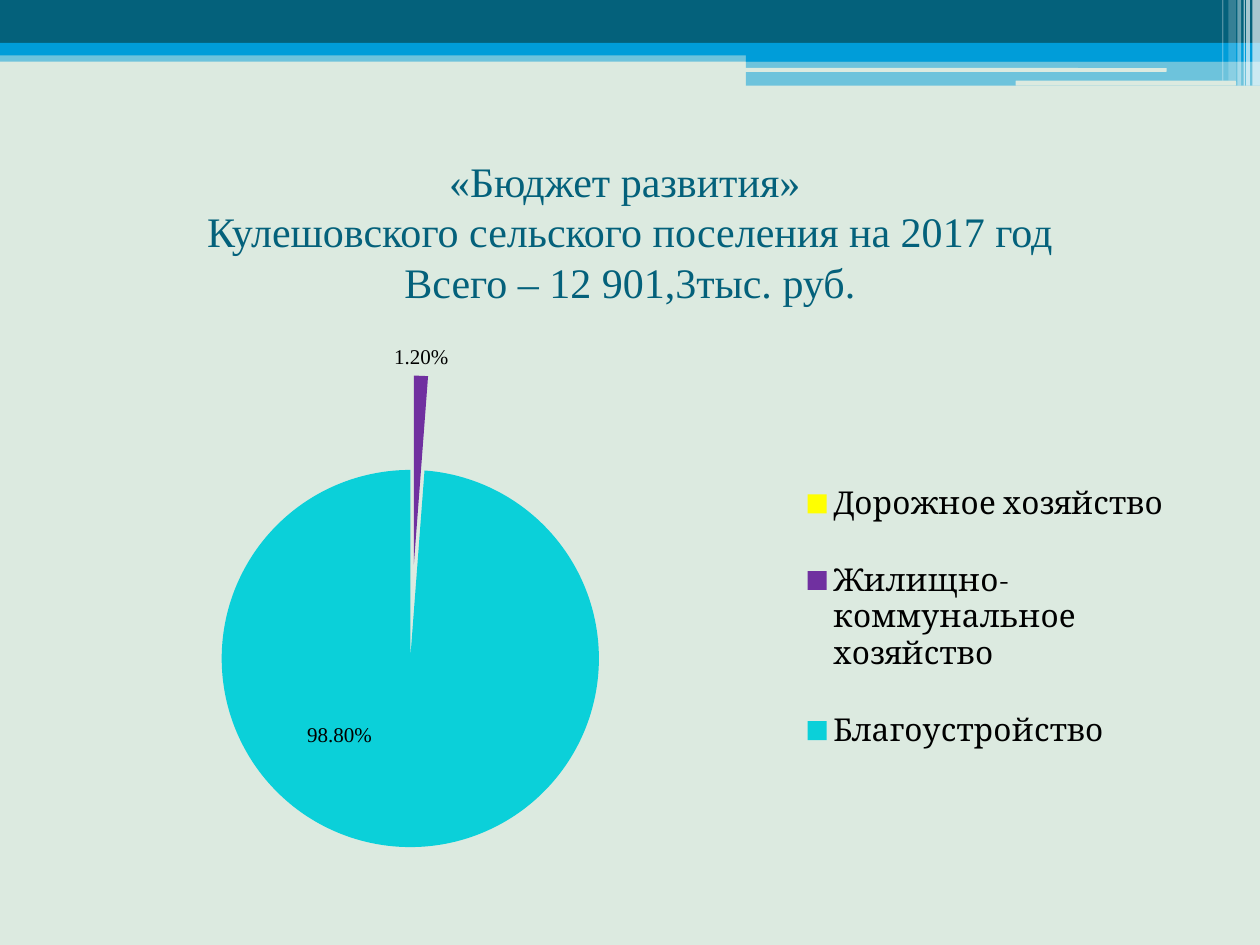
from lxml.etree import SubElement
from pptx import Presentation
from pptx.chart.data import CategoryChartData
from pptx.dml.color import RGBColor
from pptx.enum.chart import XL_CHART_TYPE, XL_LABEL_POSITION, XL_LEGEND_POSITION
from pptx.enum.shapes import MSO_SHAPE
from pptx.enum.text import MSO_ANCHOR, PP_ALIGN
from pptx.oxml import parse_xml
from pptx.oxml.ns import nsdecls, qn
from pptx.util import Inches, Pt

TEAL, BLUE, PAPER, WHITE = "04617B", "009DD9", "DCEAE0", "FFFFFF"
SERIF = "Times New Roman"
PERCENT = "0.00%"

# left, top, width, height, colour, opacity in percent
BANDS = [
    (0, 0.4, 10, 0.09, BLUE, 50),
    (0, 0, 10, 0.34, TEAL, 100),
    (0, 0.34, 10, 0.1, BLUE, 100),
    (5.92, 0.39, 4.08, 0.1, BLUE, 100),
    (5.92, 0.48, 4.08, 0.2, BLUE, 50),
]
GROOVES = [(5.91, 0.54, 3.35, 0.03), (8.06, 0.64, 1.75, 0.04)]
# left, width, height, opacity in percent
STRIPES = [
    (9.94, 0.06, 0.68, 65), (9.89, 0.03, 0.68, 65), (9.87, 0.01, 0.68, 60),
    (9.82, 0.03, 0.68, 40), (9.75, 0.06, 0.64, 20), (9.7, 0.01, 0.64, 30),
]
SECTORS = [
    ("Дорожное хозяйство ", None, "FFFF00"),
    ("Жилищно-коммунальное хозяйство", 0.012, "7030A0"),
    ("Благоустройство", 0.988, "0BD0D9"),
]
TITLE_LINES = [
    "«Бюджет развития» ",
    "Кулешовского сельского поселения на 2017 год",
    "Всего – 12 901,3тыс. руб.",
]


def rgb(value):
    return RGBColor.from_string(value)


def set_font(font, size, name, colour):
    formats = {"size": Pt(size), "name": name, "bold": False}
    for attribute, value in formats.items():
        setattr(font, attribute, value)
    font.color.rgb = rgb(colour)


def add_bar(slide, box, colour, opacity=100, kind=MSO_SHAPE.RECTANGLE):
    bar = slide.shapes.add_shape(kind, *map(Inches, box))
    bar.shadow.inherit = False
    bar.line.fill.background()
    bar.fill.solid()
    bar.fill.fore_color.rgb = rgb(colour)
    if opacity < 100:
        tint = bar.fill._xPr.find(".//" + qn("a:srgbClr"))
        SubElement(tint, qn("a:alpha"), val=str(opacity * 1000))
    return bar


def manual_layout(target=None, **offsets):
    """Chart layout in fractions of the chart's width and height."""
    parts = [f'<c:layoutTarget val="{target}"/>'] if target else []
    if "w" in offsets:
        parts += ['<c:xMode val="edge"/>', '<c:yMode val="edge"/>']
    parts += [f'<c:{key} val="{value}"/>' for key, value in offsets.items()]
    return parse_xml(f'<c:layout {nsdecls("c")}><c:manualLayout>'
                     f'{"".join(parts)}</c:manualLayout></c:layout>')


def add_title(slide):
    title = slide.shapes.add_textbox(*map(Inches, (0.5, 1.25, 9, 1.17))).text_frame
    title.word_wrap = True
    title.vertical_anchor = MSO_ANCHOR.MIDDLE
    heading = title.paragraphs[0]
    heading.text = "\v".join(TITLE_LINES)
    heading.alignment = PP_ALIGN.CENTER
    for line in heading.runs:
        set_font(line.font, 24, SERIF, TEAL)


def label_sector(point, position, **shift):
    label = point.data_label
    set_font(label.font, 12, SERIF, "000000")
    label.position = position
    label_xml = label._dLbl
    label_xml.insert(1, parse_xml(
        f'<c:numFmt {nsdecls("c")} formatCode="{PERCENT}" sourceLinked="0"/>'))
    if shift:
        label_xml.insert(1, manual_layout(**shift))


def add_budget_pie(slide):
    budget = CategoryChartData(number_format=PERCENT)
    budget.categories = [name for name, _, _ in SECTORS]
    budget.add_series("Series 1", [share for _, share, _ in SECTORS])
    chart = slide.shapes.add_chart(
        XL_CHART_TYPE.PIE, *map(Inches, (0.56, 2.52, 8.89, 4.62)), budget).chart
    set_font(chart.font, 18, "Cambria", "000000")
    chart.has_title = False

    # Plot area and legend
    plot = chart.plots[0]
    plot.vary_by_categories = True
    plot_area = chart._chartSpace.chart.plotArea
    for old_layout in plot_area.findall(qn("c:layout")):
        plot_area.remove(old_layout)
    plot_area.insert(0, manual_layout("inner", x=0.03, y=0.1, w=0.55, h=0.81))
    chart.has_legend = True
    legend = chart.legend
    legend.position = XL_LEGEND_POSITION.RIGHT
    legend.include_in_layout = False
    legend._element.find(qn("c:legendPos")).addnext(
        manual_layout(x=0.65, y=0.22, w=0.34, h=0.59))

    # Sectors pulled apart
    series = plot.series[0]
    for index, (_, _, colour) in enumerate(SECTORS):
        fill = series.points[index].format.fill
        fill.solid()
        fill.fore_color.rgb = rgb(colour)
    series._element.find(qn("c:dPt")).addprevious(
        parse_xml(f'<c:explosion {nsdecls("c")} val="25"/>'))

    # Shares
    labels = series.data_labels
    labels.show_value = True
    labels.number_format = PERCENT
    labels.number_format_is_linked = False
    set_font(labels.font, 12, SERIF, "000000")
    label_sector(series.points[1], XL_LABEL_POSITION.OUTSIDE_END)
    label_sector(series.points[2], XL_LABEL_POSITION.CENTER, x=-0.06, y=-0.03)


def main():
    deck = Presentation()
    deck.slide_width, deck.slide_height = Inches(10), Inches(7.5)
    slide = deck.slides.add_slide(deck.slide_layouts[6])
    slide.background.fill.solid()
    slide.background.fill.fore_color.rgb = rgb(PAPER)

    # Header decoration
    for *box, colour, opacity in BANDS:
        add_bar(slide, box, colour, opacity)
    for box in GROOVES:
        add_bar(slide, box, PAPER, kind=MSO_SHAPE.ROUNDED_RECTANGLE)
    for left, width, height, opacity in STRIPES:
        add_bar(slide, (left, 0, width, height), WHITE, opacity)

    # Content
    add_budget_pie(slide)
    add_title(slide)
    deck.save("out.pptx")


if __name__ == "__main__":
    main()
